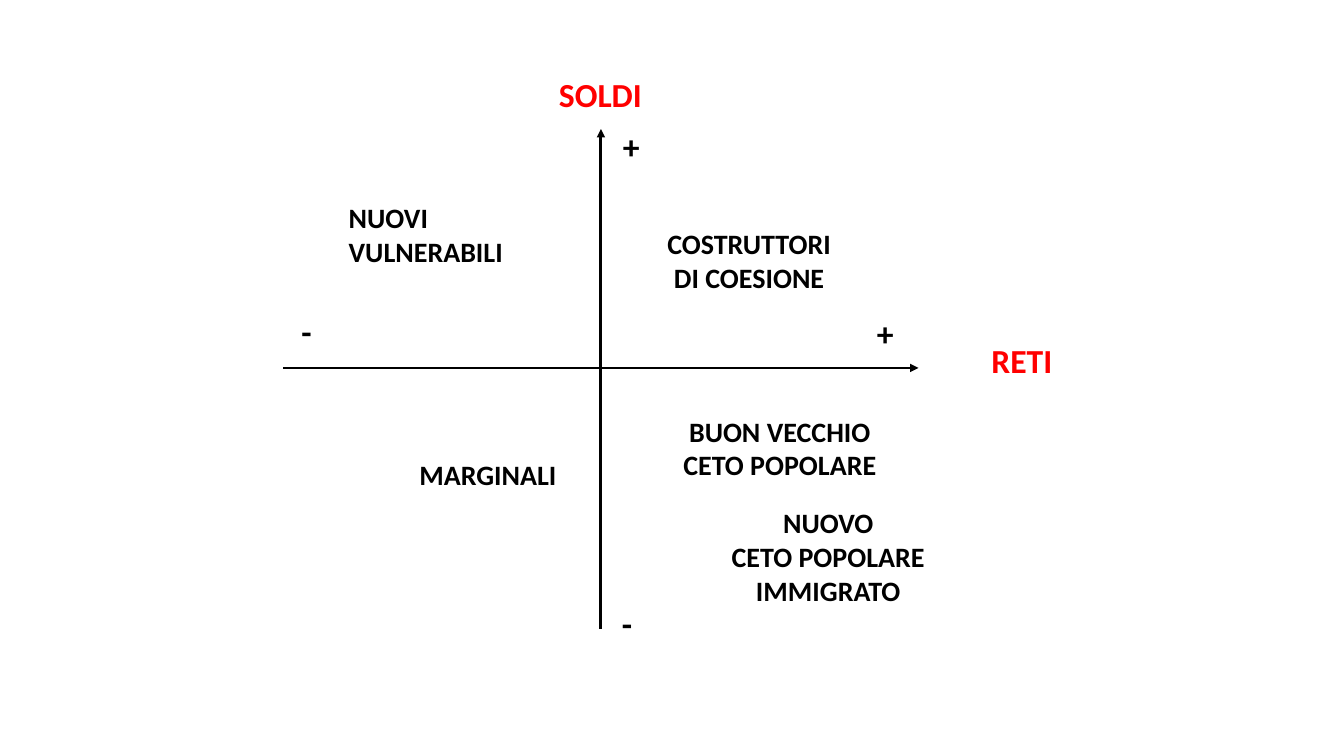
from lxml import etree
from pptx import Presentation
from pptx.dml.color import RGBColor
from pptx.enum.shapes import MSO_CONNECTOR
from pptx.enum.text import MSO_AUTO_SIZE, PP_ALIGN
from pptx.oxml.ns import qn
from pptx.util import Emu, Pt

PX = 9144
LEFT, CENTER = PP_ALIGN.LEFT, PP_ALIGN.CENTER
STRAIGHT = MSO_CONNECTOR.STRAIGHT
GROW = MSO_AUTO_SIZE.SHAPE_TO_FIT_TEXT
COLORS = {"ink": "000000", "axis": "FF0000"}


def px(n):
    return Emu(n * PX)


def write(tf, text, size=20, color="ink", align=LEFT, font="Calibri"):
    for i, line in enumerate(text.split("\n")):
        p = tf.paragraphs[0] if i == 0 else tf.add_paragraph()
        p.alignment = align
        r = p.add_run()
        r.text = line
        r.font.name = font
        r.font.size = Pt(size)
        r.font.bold = True
        r.font.color.rgb = RGBColor.from_string(COLORS[color])


class Diagram:
    def __init__(self, prs):
        self.s = prs.slides.add_slide(prs.slide_layouts[6])
        self.line_width = Pt(2)

    def label(self, box, text, wrap=False, **fmt):
        sp = self.s.shapes.add_textbox(*map(px, box))
        tf = sp.text_frame
        tf.word_wrap = wrap
        tf.auto_size = GROW
        write(tf, text, **fmt)

    def arrow(self, start, end):
        sp = self.s.shapes.add_connector(STRAIGHT, *map(px, start + end))
        sp.line.width = self.line_width
        sp.line.color.rgb = RGBColor.from_string(COLORS["ink"])
        ln = sp.line._get_or_add_ln()
        etree.SubElement(ln, qn("a:tailEnd"), type="triangle")
        etree.SubElement(sp._element.spPr, qn("a:effectLst"))


def main():
    prs = Presentation()
    prs.slide_width, prs.slide_height = px(1333), px(750)
    d = Diagram(prs)

    d.label((336, 194, 208, 77), "NUOVI\nVULNERABILI", wrap=True)
    d.label((406, 449, 158, 44), "MARGINALI")
    for box, text in [
        ((667, 406, 213, 77), "BUON VECCHIO\nCETO POPOLARE"),
        ((715, 497, 213, 111), "NUOVO\nCETO POPOLARE\nIMMIGRATO"),
        ((651, 220, 184, 77), "COSTRUTTORI\nDI COESIONE"),
    ]:
        d.label(box, text, align=CENTER)

    title = {"size": 24, "color": "axis", "align": CENTER}
    d.label((544, 68, 103, 50), "SOLDI", **title)
    d.label((919, 332, 189, 50), "RETI", wrap=True, **title)

    for x, y, w, sign in [
        (860, 306, 37, "+"),
        (608, 120, 37, "+"),
        (289, 304, 31, "-"),
        (607, 593, 31, "-"),
    ]:
        d.label((x, y, w, 50), sign, size=24)

    d.arrow((281, 365), (911, 365))
    d.arrow((596, 624), (596, 128))
    prs.save("out.pptx")


if __name__ == "__main__":
    main()
